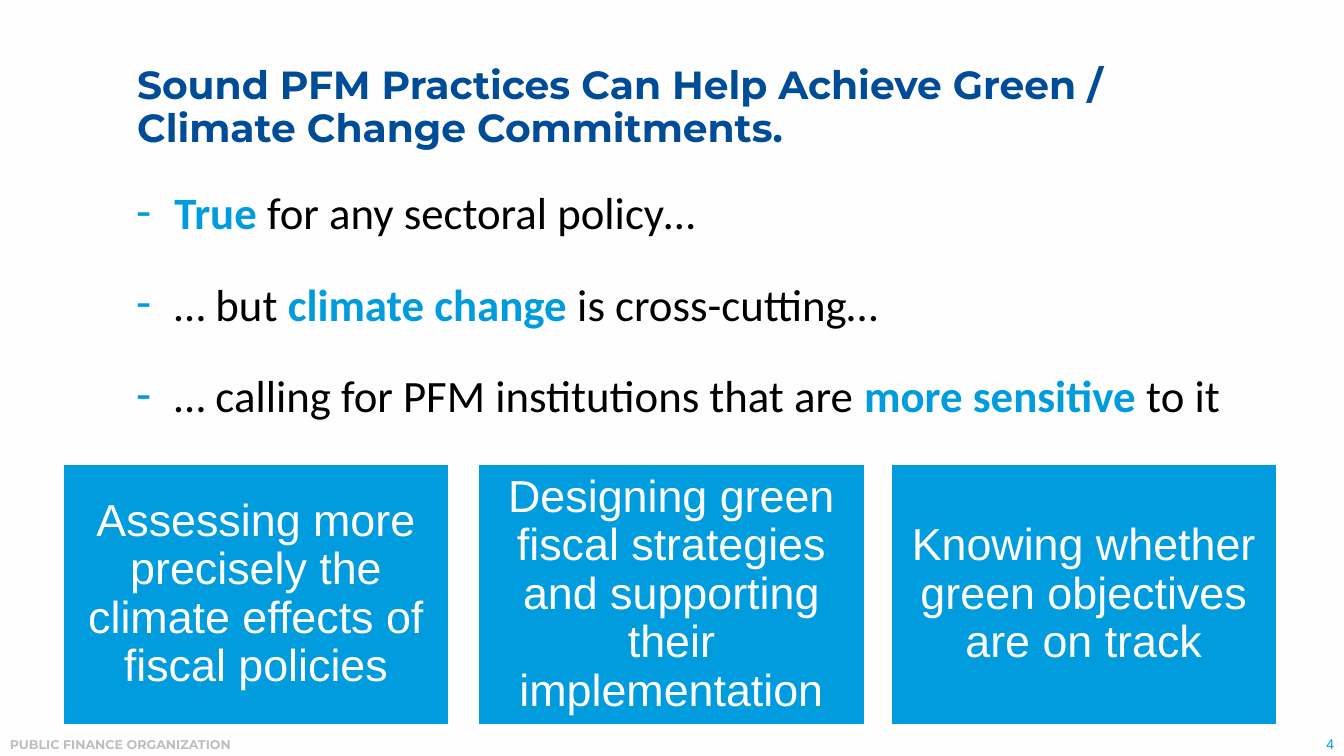
from lxml import etree
from pptx import Presentation
from pptx.dml.color import RGBColor
from pptx.enum.shapes import MSO_SHAPE
from pptx.enum.text import MSO_ANCHOR, MSO_AUTO_SIZE, PP_ALIGN
from pptx.oxml.ns import qn
from pptx.util import Inches, Pt

COLORS = {
    "background": "FEFEFE",
    "title": "004C97",
    "accent": "009CDE",
    "text": "000000",
    "footer": "BEBEBE",
}

# Each bullet is a list of (text, is_highlighted) pieces
BULLETS = [
    [("True ", True), ("for any sectoral policy…", False)],
    [("… but ", False), ("climate change ", True), ("is cross-cutting…", False)],
    [("… calling for PFM institutions that are ", False),
     ("more sensitive ", True), ("to it", False)],
]

BOXES = [
    (0.62, "Assessing more precisely the climate effects of fiscal policies"),
    (4.74, "Designing green fiscal strategies and supporting their implementation"),
    (8.83, "Knowing whether green objectives are on track"),
]


def color(name):
    return RGBColor.from_string(COLORS[name])


def format_run(run, font_name, size, color_name, bold=False):
    run.font.name = font_name
    run.font.size = Pt(size)
    run.font.bold = bold
    run.font.color.rgb = color(color_name)


def place(shape, left, top, width, height):
    shape.left, shape.top = Inches(left), Inches(top)
    shape.width, shape.height = Inches(width), Inches(height)


def set_frame(text_frame, anchor, horizontal, vertical):
    text_frame.word_wrap = True
    text_frame.auto_size = MSO_AUTO_SIZE.NONE
    text_frame.vertical_anchor = anchor
    text_frame.margin_left = text_frame.margin_right = Inches(horizontal)
    text_frame.margin_top = text_frame.margin_bottom = Inches(vertical)


def add_dash_bullet(paragraph):
    properties = paragraph._p.get_or_add_pPr()
    properties.set("marL", str(Inches(0.38)))
    properties.set("indent", str(-Inches(0.38)))
    bullet_color = etree.SubElement(properties, qn("a:buClr"))
    etree.SubElement(bullet_color, qn("a:srgbClr"), val=COLORS["accent"])
    etree.SubElement(properties, qn("a:buSzPct"), val="110000")
    etree.SubElement(properties, qn("a:buFont"), typeface="Calibri")
    etree.SubElement(properties, qn("a:buChar"), char="-")


def fill_title(title):
    place(title, 1.36, 0.54, 10.62, 1.07)
    set_frame(title.text_frame, MSO_ANCHOR.MIDDLE, 0, 0)
    title.text_frame.text = (
        "Sound PFM Practices Can Help Achieve Green / Climate Change Commitments."
    )
    paragraph = title.text_frame.paragraphs[0]
    paragraph.alignment = PP_ALIGN.LEFT
    paragraph.line_spacing = 0.9
    format_run(paragraph.runs[0], "Montserrat", 28, "title", bold=True)


def fill_bullets(body):
    place(body, 1.35, 1.65, 10.91, 5.32)
    text_frame = body.text_frame
    set_frame(text_frame, MSO_ANCHOR.TOP, 0, 0)
    text_frame.margin_top = Inches(0.15)
    for index, pieces in enumerate(BULLETS):
        paragraph = text_frame.add_paragraph() if index else text_frame.paragraphs[0]
        paragraph.line_spacing = 1.07
        paragraph.space_before = Pt(24)
        add_dash_bullet(paragraph)
        for text, highlighted in pieces:
            run = paragraph.add_run()
            run.text = text
            format_run(run, "Calibri", 32, "accent" if highlighted else "text",
                       bold=highlighted)


def add_box(slide, left, text):
    box = slide.shapes.add_shape(MSO_SHAPE.RECTANGLE, Inches(left), Inches(4.6),
                                 Inches(3.84), Inches(2.6))
    box.shadow.inherit = False
    box.fill.solid()
    box.fill.fore_color.rgb = color("accent")
    box.line.color.rgb = color("background")
    box.line.width = Pt(2)
    set_frame(box.text_frame, MSO_ANCHOR.MIDDLE, 0.11, 0.11)
    box.text_frame.text = text
    paragraph = box.text_frame.paragraphs[0]
    paragraph.alignment = PP_ALIGN.CENTER
    paragraph.line_spacing = 0.9
    format_run(paragraph.runs[0], "Arial", 32, "background")


def add_label(slide, text, position, alignment, anchor, **font):
    label = slide.shapes.add_textbox(*[Inches(length) for length in position])
    set_frame(label.text_frame, anchor, 0.1, 0.05)
    label.text_frame.text = text
    paragraph = label.text_frame.paragraphs[0]
    paragraph.alignment = alignment
    format_run(paragraph.runs[0], **font)


def main():
    presentation = Presentation()
    presentation.slide_width = Inches(13.33)
    presentation.slide_height = Inches(7.5)
    slide = presentation.slides.add_slide(presentation.slide_layouts[1])
    slide.background.fill.solid()
    slide.background.fill.fore_color.rgb = color("background")

    # Title and list
    fill_title(slide.shapes.title)
    fill_bullets(slide.placeholders[1])

    # Row of boxes
    for left, text in BOXES:
        add_box(slide, left, text)

    # Footer and slide number
    add_label(slide, "PUBLIC FINANCE ORGANIZATION", (0, 7.26, 10, 0.25),
              PP_ALIGN.LEFT, MSO_ANCHOR.TOP,
              font_name="Montserrat", size=9, color_name="footer", bold=True)
    add_label(slide, "4", (12.01, 7.24, 1.32, 0.27),
              PP_ALIGN.RIGHT, MSO_ANCHOR.BOTTOM,
              font_name="Arial", size=10, color_name="accent")

    presentation.save("out.pptx")


if __name__ == "__main__":
    main()
